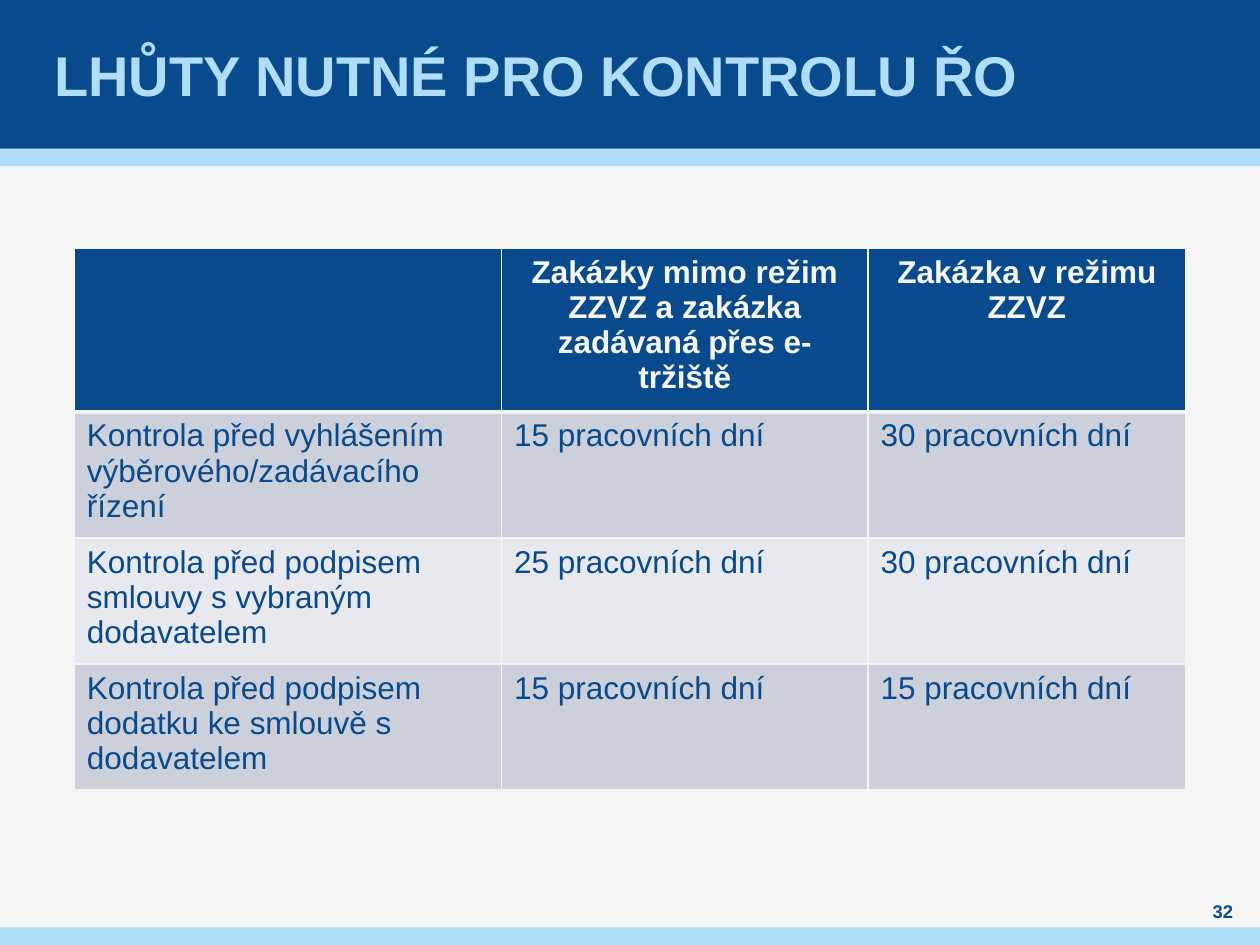
from pptx import Presentation
from pptx.dml.color import RGBColor
from pptx.enum.shapes import MSO_SHAPE
from pptx.enum.text import MSO_ANCHOR, PP_ALIGN
from pptx.oxml.xmlchemy import OxmlElement
from pptx.util import Inches, Pt

COLORS = {
    "navy": "084A8B",
    "sky": "AFDDFA",
    "paper": "F5F5F5",
    "odd": "CCD0DA",
    "even": "E7E9EE",
}
ROWS = [
    ["", "Zakázky mimo režim ZZVZ a zakázka zadávaná přes e-tržiště",
     "Zakázka v režimu ZZVZ"],
    ["Kontrola před vyhlášením výběrového/zadávacího řízení",
     "15 pracovních dní", "30 pracovních dní"],
    ["Kontrola před podpisem smlouvy s vybraným dodavatelem",
     "25 pracovních dní", "30 pracovních dní"],
    ["Kontrola před podpisem dodatku ke smlouvě s dodavatelem",
     "15 pracovních dní", "15 pracovních dní"],
]
WIDTHS = [3.39, 2.91, 2.52]
HEIGHTS = [1.21, 0.94, 0.94, 0.94]


def paint(fill, color):
    """Give a fill one solid colour."""
    fill.solid()
    fill.fore_color.rgb = RGBColor.from_string(COLORS[color])


def write(frame, text, size=18, color="navy", bold=False, align=PP_ALIGN.LEFT):
    """Put formatted text in a frame."""
    frame.word_wrap = True
    para = frame.paragraphs[0]
    para.alignment = align
    run = para.add_run()
    run.text = text
    run.font.name = "Arial"
    run.font.size = Pt(size)
    run.font.bold = bold
    run.font.color.rgb = RGBColor.from_string(COLORS[color])


def add_band(slide, top, height, color):
    """Draw a band across the whole slide."""
    band = slide.shapes.add_shape(
        MSO_SHAPE.RECTANGLE, 0, Inches(top), Inches(10), Inches(height))
    band.shadow.inherit = False
    paint(band.fill, color)
    band.line.fill.background()


def add_label(slide, text, left, top, width, height, inset=0, **style):
    """Add a text box centred on its height."""
    box = slide.shapes.add_textbox(
        Inches(left), Inches(top), Inches(width), Inches(height))
    frame = box.text_frame
    frame.margin_left = frame.margin_right = Inches(inset)
    frame.margin_top = frame.margin_bottom = 0
    frame.vertical_anchor = MSO_ANCHOR.MIDDLE
    write(frame, text, **style)


def add_edges(cell, top, bottom):
    """Add cell borders, with widths in points above and below."""
    props = cell._tc.get_or_add_tcPr()
    sides = [("L", 1), ("R", 1), ("T", top), ("B", bottom)]
    for spot, (side, width) in enumerate(sides):
        edge = OxmlElement(f"a:ln{side}")
        edge.set("w", str(Pt(width)))
        fill = OxmlElement("a:solidFill")
        color = OxmlElement("a:srgbClr")
        color.set("val", COLORS["paper"])
        fill.append(color)
        edge.append(fill)
        props.insert(spot, edge)


def add_grid(slide):
    """Add the table of time limits."""
    table = slide.shapes.add_table(
        len(ROWS), len(WIDTHS), Inches(0.59), Inches(1.97),
        Inches(sum(WIDTHS)), Inches(sum(HEIGHTS))).table
    for column, width in zip(table.columns, WIDTHS):
        column.width = Inches(width)
    for r, (row, height) in enumerate(zip(ROWS, HEIGHTS)):
        table.rows[r].height = Inches(height)
        head = r == 0
        shade = "navy" if head else "odd" if r % 2 else "even"
        for c, text in enumerate(row):
            cell = table.cell(r, c)
            paint(cell.fill, shade)
            add_edges(cell, 3 if r == 1 else 1, 3 if head else 1)
            if text:
                write(cell.text_frame, text, bold=head,
                      color="paper" if head else "navy",
                      align=PP_ALIGN.CENTER if head else PP_ALIGN.LEFT)


def main():
    """Build and save the slide."""
    deck = Presentation()
    deck.slide_width, deck.slide_height = Inches(10), Inches(7.5)
    slide = deck.slides.add_slide(deck.slide_layouts[6])
    paint(slide.background.fill, "paper")
    add_band(slide, 1.18, 0.14, "sky")
    add_band(slide, 0, 1.18, "navy")
    add_band(slide, 7.36, 0.14, "sky")
    add_label(slide, "LHŮTY NUTNÉ PRO KONTROLU ŘO", 0.39, 0, 9.21, 1.18,
              inset=0.04, size=32, color="sky", bold=True)
    add_grid(slide)
    add_label(slide, "32", 9.45, 7.13, 0.51, 0.2,
              size=10.5, bold=True, align=PP_ALIGN.CENTER)
    deck.save("out.pptx")


if __name__ == "__main__":
    main()
